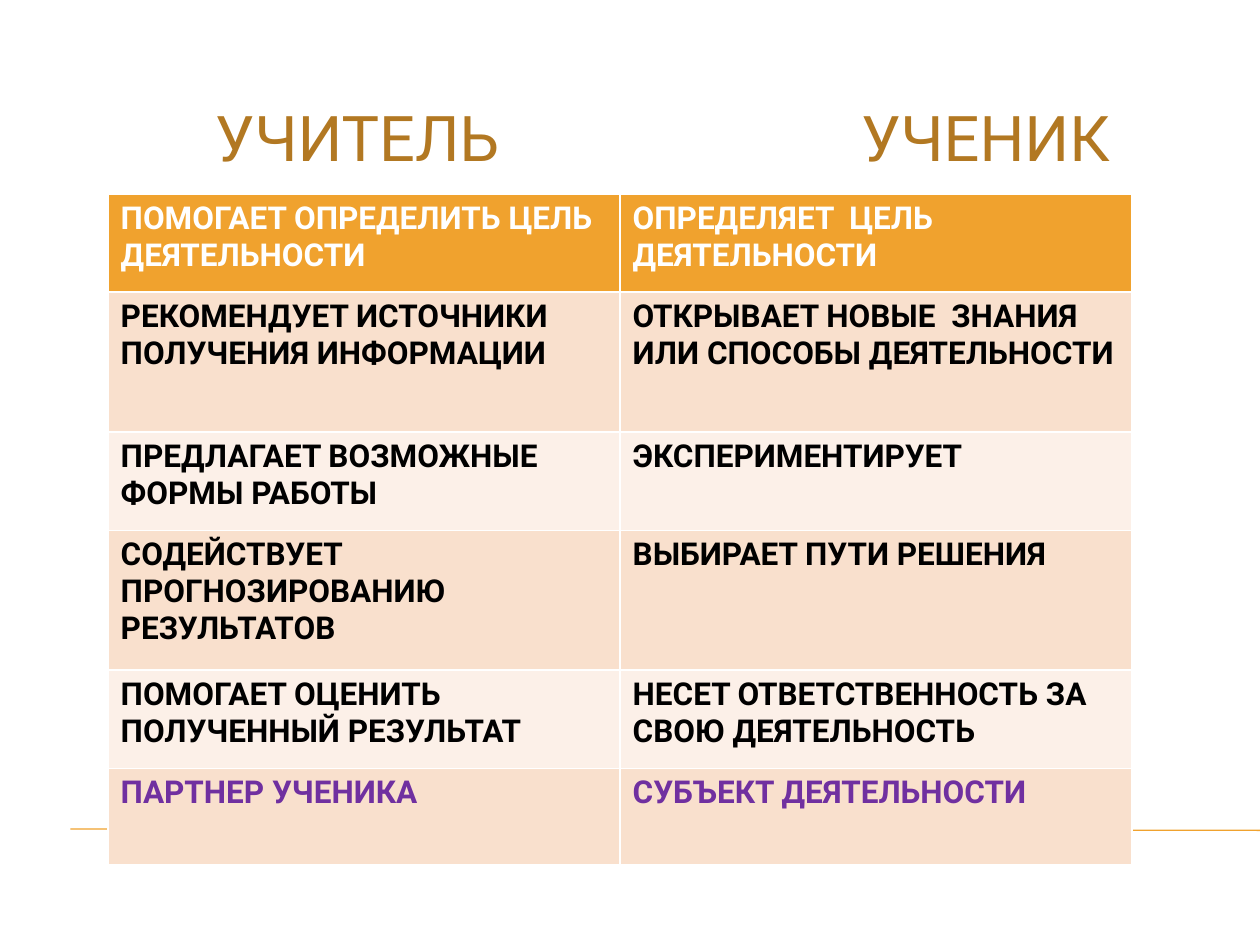
from lxml import etree
from pptx import Presentation
from pptx import util as u
from pptx.dml.color import RGBColor
from pptx.enum import shapes, text
from pptx.oxml.ns import qn

ORANGE = RGBColor(0xF0, 0xA2, 0x2E)
BROWN = RGBColor(0xB2, 0x78, 0x22)
PEACH = RGBColor(0xF9, 0xE0, 0xCD)
CREAM = RGBColor(0xFC, 0xF0, 0xE8)
PURPLE = RGBColor(0x70, 0x30, 0xA0)
WHITE = RGBColor(0xFF, 0xFF, 0xFF)
BLACK = RGBColor(0, 0, 0)
FONT = "Roboto"

ROLES = [
    ("ПОМОГАЕТ ОПРЕДЕЛИТЬ ЦЕЛЬ ДЕЯТЕЛЬНОСТИ", "ОПРЕДЕЛЯЕТ  ЦЕЛЬ ДЕЯТЕЛЬНОСТИ"),
    ("РЕКОМЕНДУЕТ ИСТОЧНИКИ ПОЛУЧЕНИЯ ИНФОРМАЦИИ",
     "ОТКРЫВАЕТ НОВЫЕ  ЗНАНИЯ ИЛИ СПОСОБЫ ДЕЯТЕЛЬНОСТИ"),
    ("ПРЕДЛАГАЕТ ВОЗМОЖНЫЕ ФОРМЫ РАБОТЫ", "ЭКСПЕРИМЕНТИРУЕТ"),
    ("СОДЕЙСТВУЕТ ПРОГНОЗИРОВАНИЮ РЕЗУЛЬТАТОВ", "ВЫБИРАЕТ ПУТИ РЕШЕНИЯ"),
    ("ПОМОГАЕТ ОЦЕНИТЬ ПОЛУЧЕННЫЙ РЕЗУЛЬТАТ",
     "НЕСЕТ ОТВЕТСТВЕННОСТЬ ЗА СВОЮ ДЕЯТЕЛЬНОСТЬ"),
    ("ПАРТНЕР УЧЕНИКА", "СУБЪЕКТ ДЕЯТЕЛЬНОСТИ"),
]
ROW_HEIGHTS = [1.98, 2.82, 1.98, 2.82, 1.98, 1.94]


def style_text(paragraph, size, color, bold):
    font = paragraph.font
    font.name, font.size, font.bold = FONT, u.Pt(size), bold
    font.color.rgb = color


def add_rule(slide, left, top, right, bottom):
    rule = slide.shapes.add_connector(
        shapes.MSO_CONNECTOR.STRAIGHT, u.Cm(left), u.Cm(top), u.Cm(right), u.Cm(bottom))
    rule.line.color.rgb = ORANGE
    rule.line.width = u.Pt(0.75)
    etree.SubElement(rule.element.spPr, qn("a:effectLst"))


def fill_heading(heading, caption, left, top, width, height):
    heading.left, heading.top = u.Cm(left), u.Cm(top)
    heading.width, heading.height = u.Cm(width), u.Cm(height)
    frame = heading.text_frame
    frame.text = caption
    frame.vertical_anchor = text.MSO_ANCHOR.MIDDLE
    frame.paragraphs[0].alignment = text.PP_ALIGN.RIGHT
    style_text(frame.paragraphs[0], 36, BROWN, False)


def add_roles(slide, left, top, width):
    """Add the two-column table; its height is the sum of the rows."""
    table = slide.shapes.add_table(
        len(ROLES), 2, u.Cm(left), u.Cm(top), u.Cm(width), u.Cm(sum(ROW_HEIGHTS))).table
    for i, (roles, height) in enumerate(zip(ROLES, ROW_HEIGHTS)):
        table.rows[i].height = u.Cm(height)
        if i == 0:
            fill, color = ORANGE, WHITE
        else:
            fill = PEACH if i % 2 else CREAM
            color = PURPLE if i == len(ROLES) - 1 else BLACK
        for cell, role in zip(table.rows[i].cells, roles):
            cell.text = role
            cell.fill.solid()
            cell.fill.fore_color.rgb = fill
            style_text(cell.text_frame.paragraphs[0], 18, color, True)


def main():
    deck = Presentation()
    deck.slide_width, deck.slide_height = u.Cm(25.4), u.Cm(19.05)
    slide = deck.slides.add_slide(deck.slide_layouts.get_by_name("Comparison"))
    add_rule(slide, 1.42, 16.71, 25.4, 16.74)
    teacher, pupil = (slide.placeholders[idx] for idx in (1, 3))
    fill_heading(teacher, "УЧИТЕЛЬ", 0.79, 1.85, 9.53, 1.78)
    fill_heading(pupil, "УЧЕНИК", 12.9, 1.85, 9.73, 1.78)
    add_roles(slide, 2.18, 3.91, 20.64)
    for placeholder in list(slide.placeholders):
        if placeholder.has_text_frame and not placeholder.text_frame.text:
            placeholder.element.getparent().remove(placeholder.element)
    deck.save("out.pptx")


if __name__ == "__main__":
    main()
